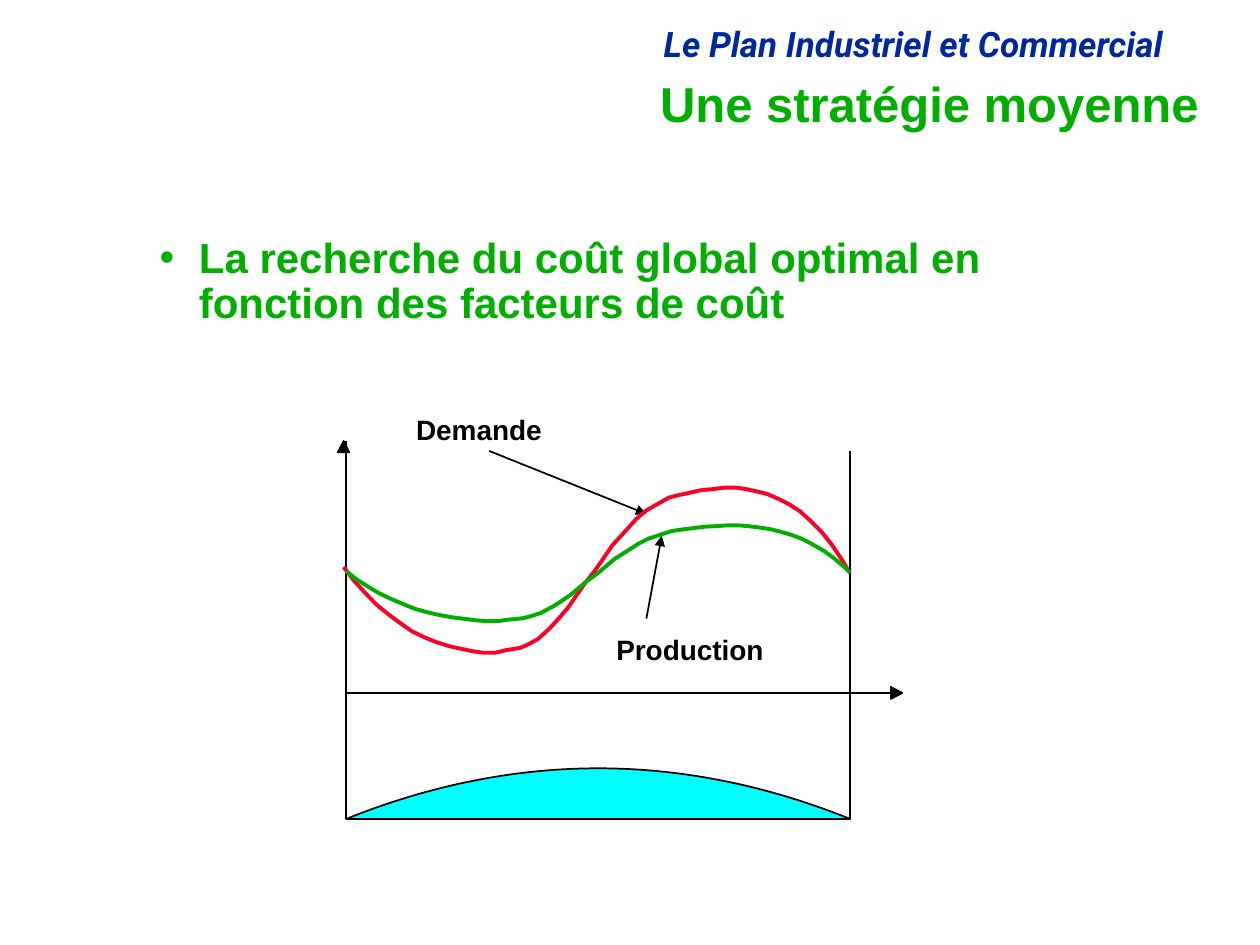
from pptx import Presentation
from pptx.dml.color import RGBColor
from pptx.enum.shapes import MSO_CONNECTOR
from pptx.enum.text import MSO_ANCHOR, MSO_AUTO_SIZE, PP_ALIGN
from pptx.oxml.ns import qn
from pptx.util import Cm, Pt
from lxml.etree import SubElement

COLOURS = {"blue": "00279F", "green": "00AE00", "red": "FC0128",
           "cyan": "00FFFF", "black": "000000"}

presentation = Presentation()
presentation.slide_width, presentation.slide_height = Cm(25.4), Cm(19.05)
slide = presentation.slides.add_slide(presentation.slide_layouts[6])


def colour(name):
    return RGBColor.from_string(COLOURS[name])


def add_outline(points, line_colour, width, fill_colour=None):
    """Draw a freeform through points in cm; it is closed when filled."""
    corners = [(Cm(x), Cm(y)) for x, y in points]
    builder = slide.shapes.build_freeform(*corners[0])
    builder.add_line_segments(corners[1:], close=fill_colour is not None)
    shape = builder.convert_to_shape()
    shape.shadow.inherit = False
    shape.line.color.rgb = colour(line_colour)
    shape.line.width = Pt(width)
    if fill_colour:
        shape.fill.solid()
        shape.fill.fore_color.rgb = colour(fill_colour)
    else:
        shape.fill.background()


# Texts: content, box in cm, colour, alignment, frame and font formats
fitted = {"word_wrap": False, "auto_size": MSO_AUTO_SIZE.SHAPE_TO_FIT_TEXT}
label_font = {"name": "Arial", "size": Pt(16)}
texts = [
    ("Le Plan Industriel et Commercial", (3.18, 0.43, 20.52, 1.02), "blue",
     PP_ALIGN.RIGHT, {"word_wrap": True},
     {"name": "Roboto", "size": Pt(20), "italic": True}),
    ("Une stratégie moyenne", (4.29, 1.52, 20.12, 1.27), "green",
     PP_ALIGN.RIGHT, {"word_wrap": True, "vertical_anchor": MSO_ANCHOR.MIDDLE},
     {"name": "Arial", "size": Pt(28)}),
    ("La recherche du coût global optimal en fonction des facteurs de coût",
     (2.97, 4.65, 19.89, 11.43), "green", PP_ALIGN.LEFT, {"word_wrap": True},
     {"name": "Arial", "size": Pt(24)}),
    ("Demande", (8.13, 8.26, 3.05, 0.86), "black", PP_ALIGN.CENTER, fitted, label_font),
    ("Production", (12.17, 12.7, 3.48, 0.86), "black", PP_ALIGN.CENTER, fitted, label_font),
]
for content, box, text_colour, alignment, frame_format, font_format in texts:
    frame = slide.shapes.add_textbox(*map(Cm, box)).text_frame
    for name, value in frame_format.items():
        setattr(frame, name, value)
    paragraph = frame.paragraphs[0]
    paragraph.alignment = alignment
    paragraph.line_spacing = 0.9
    run = paragraph.add_run()
    run.text = content
    run.font.color.rgb = colour(text_colour)
    for name, value in {"bold": True, **font_format}.items():
        setattr(run.font, name, value)

    # Bullet with hanging indent for the left-aligned statement
    if alignment == PP_ALIGN.LEFT:
        properties = paragraph._p.get_or_add_pPr()
        properties.set("marL", str(Cm(0.79)))
        properties.set("indent", str(-Cm(0.79)))
        SubElement(properties, qn("a:buFont"), typeface="Arial")
        SubElement(properties, qn("a:buChar"), char="•")

# Chart frame
left, right, base, axis = 6.98, 17.14, 16.51, 13.97

# Axes, right limit and label arrows: start, end, arrowhead
lines = [
    ((left, base), (left, 8.89), False),
    ((left, axis), (18.16, axis), False),
    ((right, base), (right, 9.09), False),
    ((9.86, 9.09), (13.03, 10.36), True),
    ((13.03, 12.47), (13.34, 10.8), True),
]
for start, end, has_arrowhead in lines:
    connector = slide.shapes.add_connector(
        MSO_CONNECTOR.STRAIGHT, *map(Cm, start + end))
    connector.line.color.rgb = colour("black")
    connector.line.width = Pt(1)
    if has_arrowhead:
        SubElement(connector.line._get_or_add_ln(), qn("a:tailEnd"), type="triangle")
    SubElement(connector._element.spPr, qn("a:effectLst"))

# Axis tips
add_outline([(6.81, 9.12), (6.93, 8.89), (7.04, 9.12)], "black", 1, "black")
add_outline([(17.96, 13.85), (18.19, axis), (17.96, 14.09)], "black", 1, "black")

# Demand curve; production is the same curve, flattened
demand = [
    (6.93, 11.43), (7.14, 11.71), (7.37, 11.96), (7.59, 12.19), (7.85, 12.4),
    (8.08, 12.57), (8.31, 12.73), (8.56, 12.85), (8.81, 12.95), (9.07, 13.03),
    (9.3, 13.08), (9.53, 13.13), (9.75, 13.16), (9.98, 13.16), (10.19, 13.11),
    (10.49, 13.06), (10.67, 12.98), (10.85, 12.88), (11.1, 12.65), (11.28, 12.45),
    (11.46, 12.24), (11.63, 11.99), (11.79, 11.76), (11.99, 11.51), (12.17, 11.25),
    (12.34, 11), (12.55, 10.77), (12.83, 10.46), (13.03, 10.29), (13.26, 10.16),
    (13.49, 10.03), (13.69, 9.98), (13.92, 9.93), (14.15, 9.88), (14.38, 9.86),
    (14.61, 9.83), (14.83, 9.83), (15.04, 9.86), (15.27, 9.91), (15.47, 9.96),
    (15.7, 10.06), (15.9, 10.16), (16.13, 10.31), (16.33, 10.49), (16.56, 10.72),
    (16.76, 10.97), (16.97, 11.28), (17.09, 11.48),
]
demand_top, production_top, flattening = 9.83, 10.59, 0.58
production = [(x + 0.05, production_top + flattening * (y - demand_top))
              for x, y in demand]
add_outline(demand, "red", 2.25)
add_outline(production, "green", 2.25)

# Stock: a parabola standing on the base line
steps, stock_height = 64, 1.02
stock = []
for step in range(steps + 1):
    offset = 2 * step / steps - 1
    stock.append((left + (right - left) * step / steps,
                  base - stock_height * (1 - offset ** 2)))
add_outline(stock, "black", 1, "cyan")

presentation.save("out.pptx")
